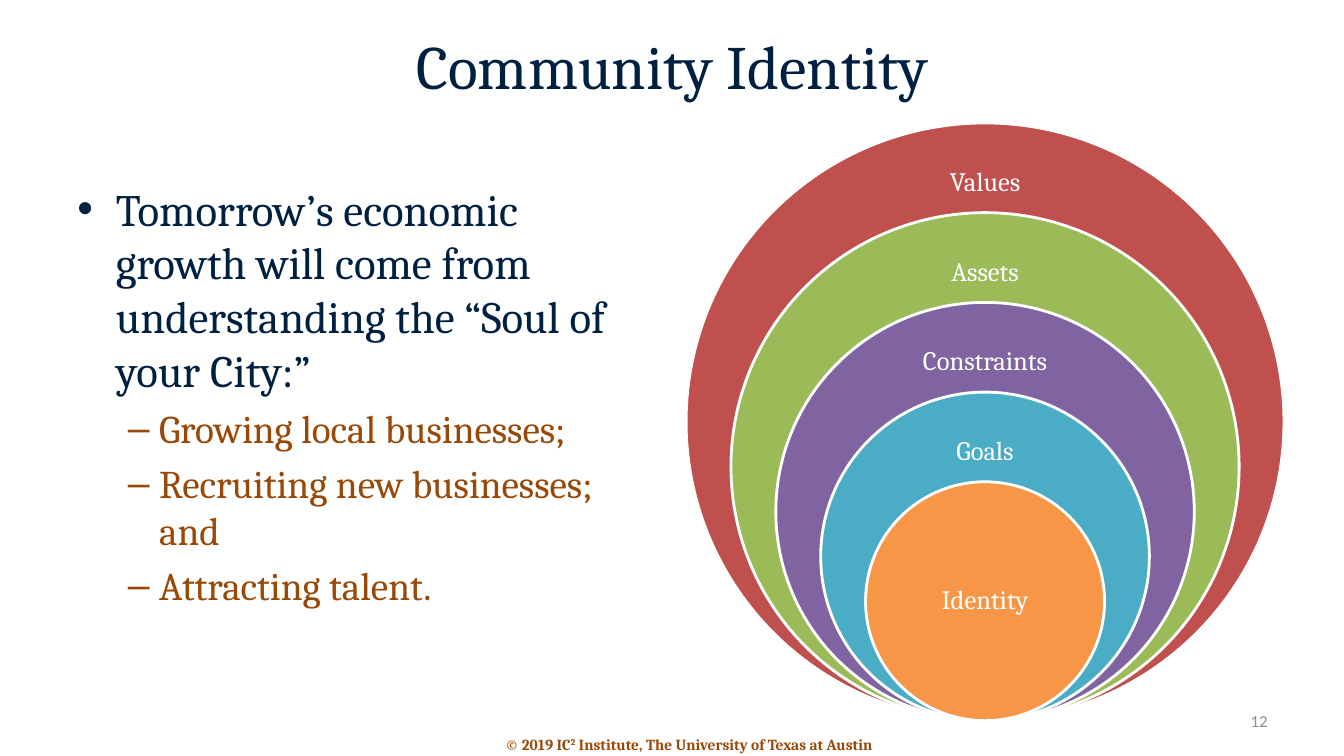
from dataclasses import dataclass
from lxml import etree
from pptx import Presentation
from pptx.dml.color import RGBColor
from pptx.enum.shapes import MSO_SHAPE as Shape
from pptx.enum.text import MSO_ANCHOR as Anchor, PP_ALIGN as Align
from pptx.oxml.ns import qn
from pptx.util import Emu, Inches, Pt

# Content
TITLE = "Community Identity"
BULLETS = [
    (0, "Tomorrow’s economic growth will come from understanding the “Soul of your City:”"),
    (1, "Growing local businesses;"),
    (1, "Recruiting new businesses; and"),
    (1, "Attracting talent."),
]
RINGS = [  # outermost first
    ("Values", "C0504D"),
    ("Assets", "9BBB59"),
    ("Constraints", "8064A2"),
    ("Goals", "4BACC6"),
    ("Identity", "F79646"),
]
FOOTER = [("© 2019 IC", False), ("2", True),
          (" Institute, The University of Texas at Austin", False)]
PAGE = "12"


@dataclass(frozen=True)
class Theme:
    serif: str = "Cambria"
    sans: str = "Calibri"
    navy: str = "002041"
    brown: str = "984807"
    grey: str = "8C8C8C"
    white: str = "FFFFFF"
    title: int = 44
    ring: int = 19
    page: int = 12
    footer: int = 11


T = Theme()
# By level: bullet, size, colour, left indent, hanging indent
LEVELS = [("•", 32, T.navy, 0.38, 0.38), ("–", 28, T.brown, 0.81, 0.31)]

prs = Presentation()
prs.slide_width, prs.slide_height = Inches(13.33), Inches(7.5)
s = prs.slides.add_slide(prs.slide_layouts[6])


def add_run(p, text, size, color, font=T.serif, bold=False):
    r = p.add_run()
    r.text = text
    f = r.font
    f.size, f.name, f.bold = Pt(size), font, bold
    f.color.rgb = RGBColor.from_string(color)
    return r


def add_box(x, y, w, h, anchor=Anchor.MIDDLE, align=Align.CENTER):
    tf = s.shapes.add_textbox(*map(Inches, (x, y, w, h))).text_frame
    tf.word_wrap, tf.vertical_anchor = True, anchor
    tf.paragraphs[0].alignment = align
    return tf


def set_bullet(p, char, left, hang):
    pPr = p._p.get_or_add_pPr()
    pPr.set("marL", str(Inches(left)))
    pPr.set("indent", str(-Inches(hang)))
    etree.SubElement(pPr, qn("a:buFont")).set("typeface", "Arial")
    etree.SubElement(pPr, qn("a:buChar")).set("char", char)


# Footer
p = add_box(3.78, 7.24, 6.11, 0.29, Anchor.TOP).paragraphs[0]
for text, raised in FOOTER:
    r = add_run(p, text, T.footer, T.brown, bold=True)
    if raised:
        r._r.get_or_add_rPr().set("baseline", "30000")

# Title
add_run(add_box(0.67, 0.02, 12, 1.25).paragraphs[0], TITLE, T.title, T.navy)

# Bullet list
tf = add_box(0.67, 1.75, 5.89, 5.4, Anchor.TOP, Align.LEFT)
for i, (level, text) in enumerate(BULLETS):
    char, size, color, left, hang = LEVELS[level]
    p = tf.add_paragraph() if i else tf.paragraphs[0]
    p.level = level
    if i:
        p.space_before = Pt(0.2 * size)
    set_bullet(p, char, left, hang)
    add_run(p, text, size, color)

# Page number
p = add_box(9.56, 6.95, 3.11, 0.4, align=Align.RIGHT).paragraphs[0]
add_run(p, PAGE, T.page, T.grey, T.sans)

# Nested circles resting on a common bottom point
CENTER, BOTTOM, OUTER, STEP = 9.77, 7.15, 5.93, 0.89
for i, (name, color) in enumerate(RINGS):
    d = OUTER - i * STEP
    top = BOTTOM - d
    ring = s.shapes.add_shape(Shape.OVAL, *map(Inches, (CENTER - d / 2, top, d, d)))
    ring.shadow.inherit = False
    ring.fill.solid()
    ring.fill.fore_color.rgb = RGBColor.from_string(color)
    ring.line.color.rgb = RGBColor.from_string(T.white)
    ring.line.width = Pt(2)

    # Label sits in the visible band; the innermost is centred in its circle
    innermost = i == len(RINGS) - 1
    y, h = (d / 4, d / 2) if innermost else (STEP / 3, STEP * 2 / 3)
    w = 1.68 if innermost else 2.2
    tf = add_box(CENTER - w / 2, top + y, w, h)
    tf.margin_left = tf.margin_right = tf.margin_top = tf.margin_bottom = Inches(0.15)
    p = tf.paragraphs[0]
    p.line_spacing = 0.9
    add_run(p, name, T.ring, T.white)

prs.save("out.pptx")
